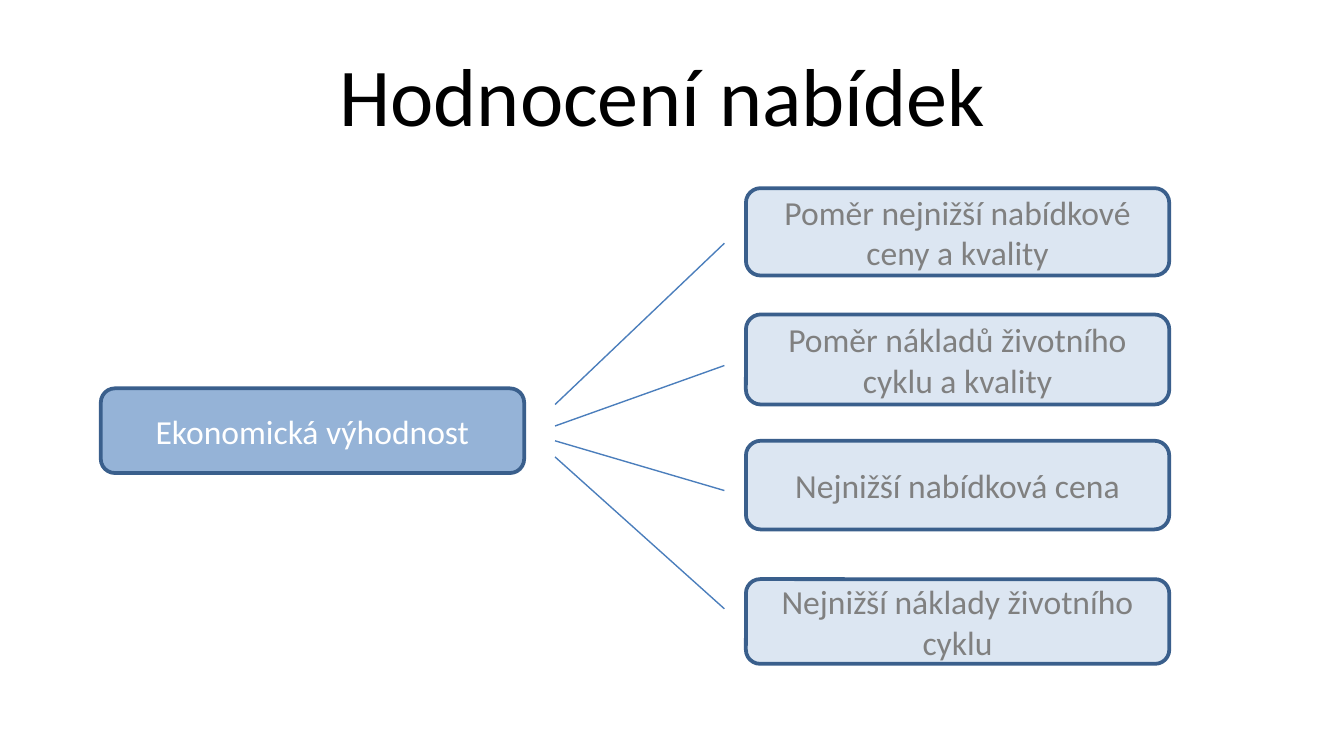
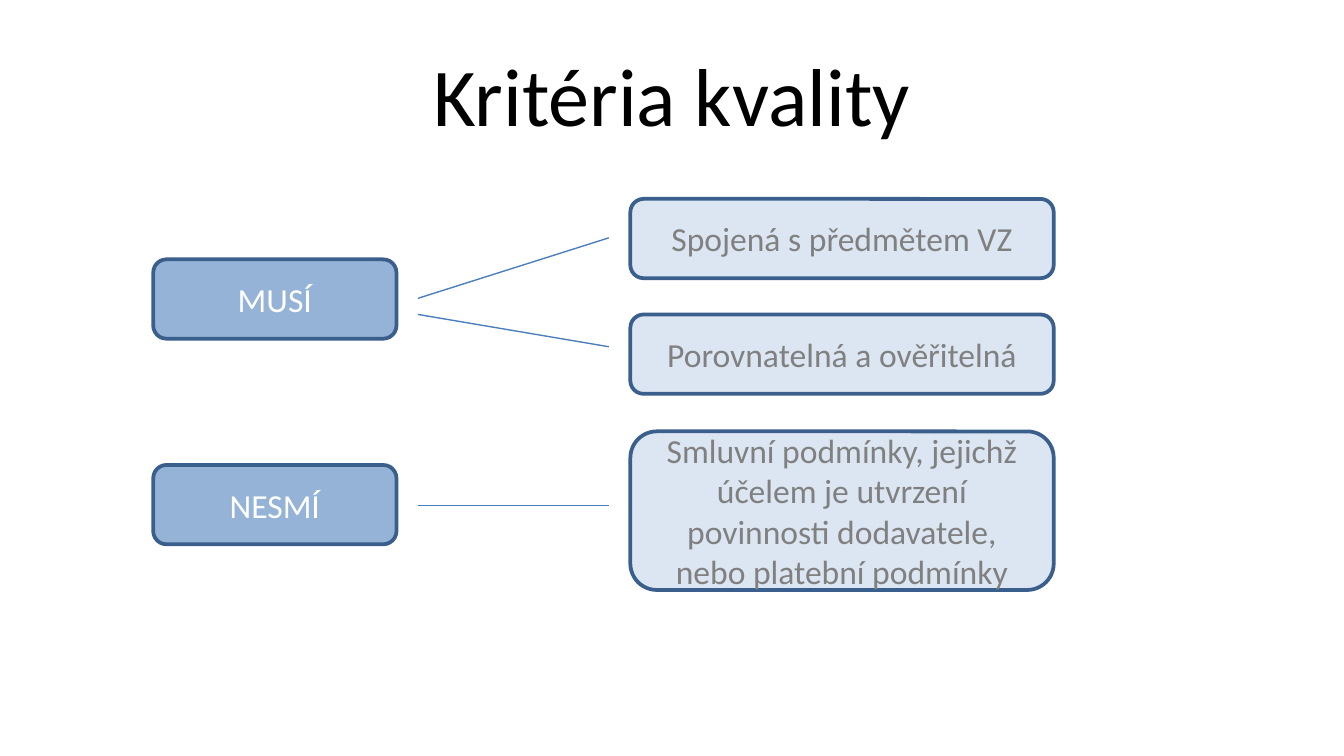
from dataclasses import dataclass

from lxml import etree
from pptx import Presentation
from pptx.dml.color import RGBColor
from pptx.enum.shapes import MSO_CONNECTOR, MSO_SHAPE
from pptx.enum.text import MSO_ANCHOR, MSO_AUTO_SIZE, PP_ALIGN
from pptx.oxml.ns import qn
from pptx.util import Inches, Pt

ROUNDED = MSO_SHAPE.ROUNDED_RECTANGLE
STRAIGHT = MSO_CONNECTOR.STRAIGHT
MIDDLE = MSO_ANCHOR.MIDDLE
CENTER = PP_ALIGN.CENTER
TITLE_ONLY = 5


@dataclass(frozen=True)
class Theme:
    font: str = "Calibri"
    title_size: float = 44
    box_size: float = 18
    outline_width: float = 2
    branch_width: float = 0.75
    title_ink: str = "000000"
    cause_fill: str = "95B3D7"
    cause_ink: str = "FFFFFF"
    criterion_fill: str = "DCE6F2"
    criterion_ink: str = "808080"
    outline: str = "3A5F8C"
    branch: str = "4B7EBC"


THEME = Theme()
SLIDE_WIDTH = 10
SLIDE_HEIGHT = SLIDE_WIDTH * 9 / 16
CRITERION_WIDTH = 3.15
ROW = 0.59

# Columns are (left, width); boxes are (text, top, height);
# branches are (start height, end height) from left to right.
SLIDES = [
    {
        "title": "Hodnocení nabídek ",
        "cause_column": (0.75, 3.15),
        "causes": [("Ekonomická výhodnost", 2.89, 0.63)],
        "criterion_left": 5.55,
        "criteria": [
            ("Poměr nejnižší nabídkové ceny a kvality", 1.4, 0.65),
            ("Poměr nákladů životního cyklu a kvality", 2.34, 0.67),
            ("Nejnižší nabídková cena", 3.28, 0.66),
            ("Nejnižší náklady životního cyklu", 4.31, 0.63),
        ],
        "branch_span": (4.13, 5.39),
        "branches": [(3.01, 1.81), (3.17, 2.72), (3.28, 3.65), (3.4, 4.53)],
    },
    {
        "title": "Kritéria kvality",
        "cause_column": (1.14, 1.81),
        "causes": [("MUSÍ", 1.93, ROW), ("NESMÍ", 3.46, ROW)],
        "criterion_left": 4.69,
        "criteria": [
            ("Spojená s předmětem VZ", 1.48, ROW),
            ("Porovnatelná a ověřitelná", 2.34, ROW),
            ("Smluvní podmínky, jejichž účelem je utvrzení povinnosti "
             "dodavatele, nebo platební podmínky", 3.21, 2 * ROW),
        ],
        "branch_span": (3.11, 4.53),
        "branches": [(2.22, 1.77), (2.34, 2.58), (3.76, 3.76)],
    },
]


def write(frame, text, size, ink):
    """Fill a text frame with one centred run."""
    frame.word_wrap = True
    frame.auto_size = MSO_AUTO_SIZE.NONE
    frame.vertical_anchor = MIDDLE
    paragraph = frame.paragraphs[0]
    paragraph.alignment = CENTER
    run = paragraph.add_run()
    run.text = text
    run.font.name = THEME.font
    run.font.size = Pt(size)
    run.font.color.rgb = RGBColor.from_string(ink)


def add_boxes(slide, column, boxes, fill, ink):
    left, width = column
    for text, top, height in boxes:
        box = slide.shapes.add_shape(
            ROUNDED, Inches(left), Inches(top), Inches(width), Inches(height))
        box.shadow.inherit = False
        box.fill.solid()
        box.fill.fore_color.rgb = RGBColor.from_string(fill)
        box.line.color.rgb = RGBColor.from_string(THEME.outline)
        box.line.width = Pt(THEME.outline_width)
        write(box.text_frame, text, THEME.box_size, ink)


deck = Presentation()
deck.slide_width = Inches(SLIDE_WIDTH)
deck.slide_height = Inches(SLIDE_HEIGHT)

for content in SLIDES:
    slide = deck.slides.add_slide(deck.slide_layouts[TITLE_ONLY])

    title = slide.shapes.title
    title.left, title.top = Inches(0.5), Inches(0.23)
    title.width, title.height = Inches(9), Inches(0.94)
    write(title.text_frame, content["title"], THEME.title_size, THEME.title_ink)

    add_boxes(slide, content["cause_column"], content["causes"],
              THEME.cause_fill, THEME.cause_ink)
    add_boxes(slide, (content["criterion_left"], CRITERION_WIDTH),
              content["criteria"], THEME.criterion_fill, THEME.criterion_ink)

    start_x, end_x = content["branch_span"]
    for start_y, end_y in content["branches"]:
        branch = slide.shapes.add_connector(
            STRAIGHT, Inches(start_x), Inches(start_y), Inches(end_x), Inches(end_y))
        branch.line.color.rgb = RGBColor.from_string(THEME.branch)
        branch.line.width = Pt(THEME.branch_width)
        etree.SubElement(branch._element.spPr, qn("a:effectLst"))

deck.save("out.pptx")
